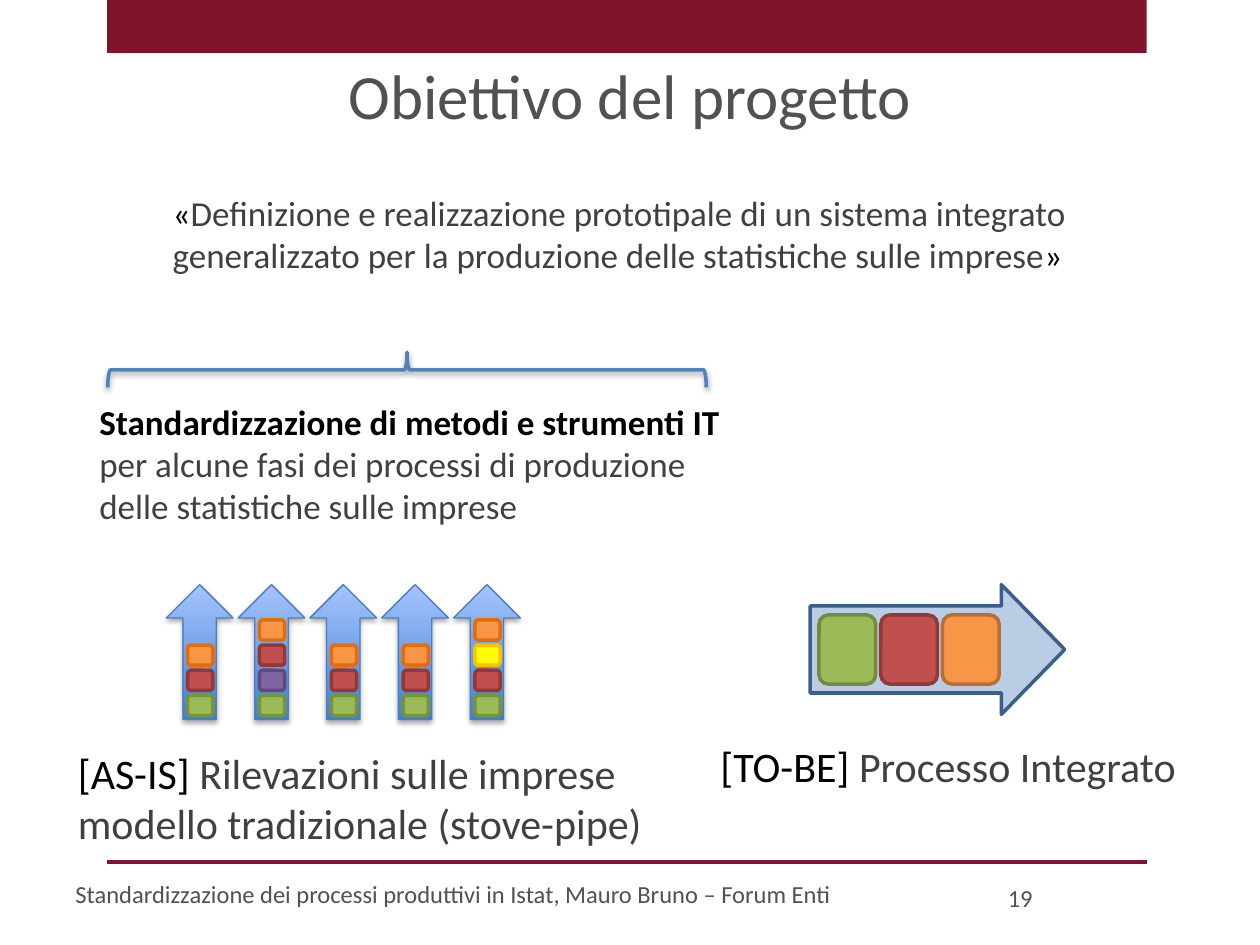
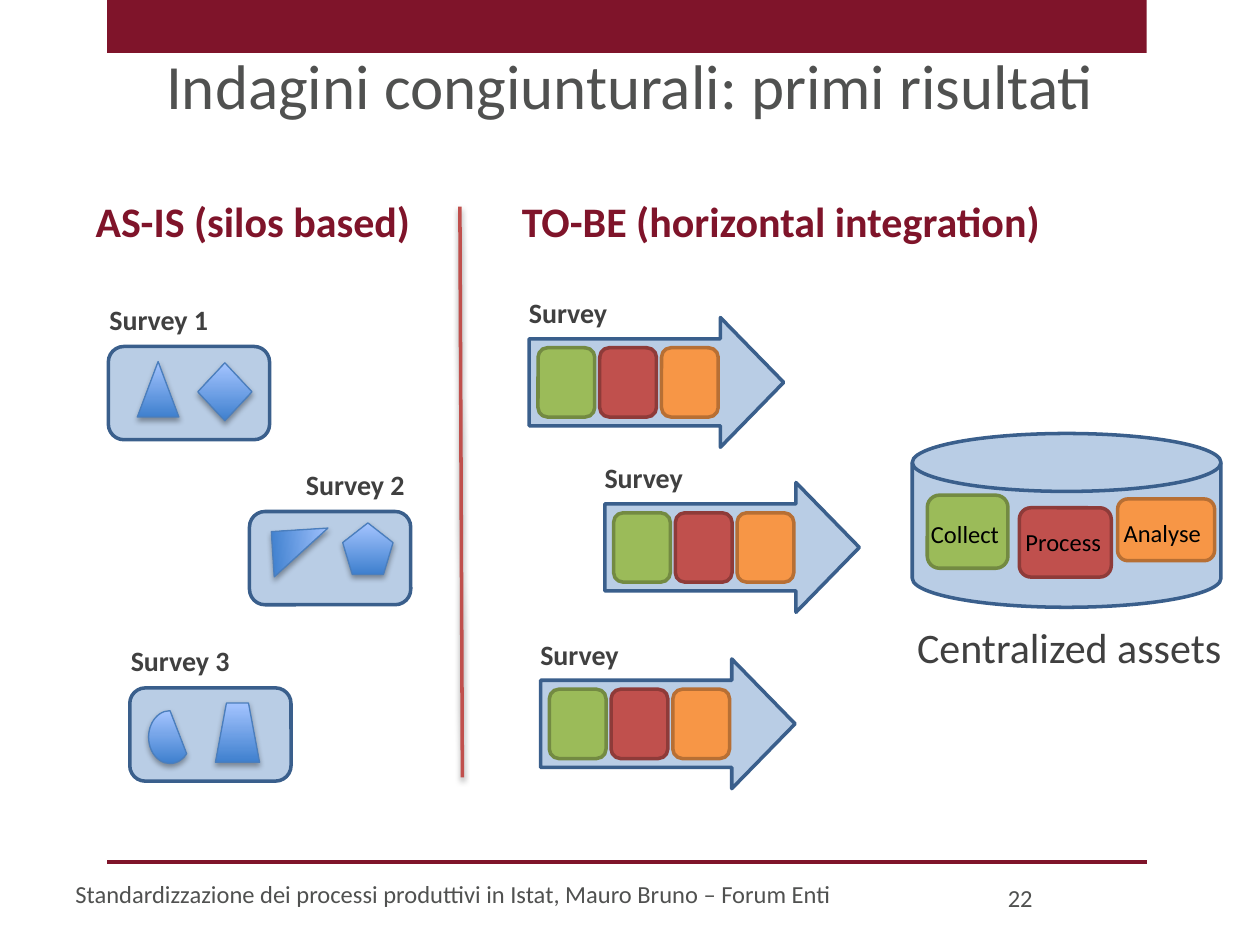
from lxml import etree
from pptx import Presentation
from pptx import util as u
from pptx.dml import color
from pptx.enum import shapes, text
from pptx.oxml import ns

# ---- Content ----
FOOT = "Standardizzazione dei processi produttivi in Istat, Mauro Bruno – Forum Enti"
GOAL = ("Definizione e realizzazione prototipale di un sistema integrato "
        "generalizzato per la produzione delle statistiche sulle imprese")
# Text boxes: place, runs of (text, colour), format
GOALS = [
    ((.77, 1.47, 8.49, .95), [("«", "000000"), (GOAL, "404040"), ("»", "000000")],
     {"size": 20, "inset": .6}),
    ((.69, 3.13, 5.26, 1.11),
     [("Standardizzazione di metodi e strumenti IT ", "000000", True),
      ("per alcune fasi dei processi di produzione delle statistiche sulle imprese", "404040")],
     {"size": 20}),
    ((.52, 5.88, 4.72, .91),
     [("[AS-IS] ", "000000"),
      ("Rilevazioni sulle imprese\nmodello tradizionale (stove-pipe)", "404040")],
     {"size": 24, "wrap": False}),
    ((5.6, 5.83, 3.85, .5), [("[TO-BE] ", "000000"), ("Processo Integrato", "404040")],
     {"size": 24, "wrap": False, "mid": True}),
]
HEADS = [
    ((.57, 1.5, 2.95, .5), [("AS-IS (silos based) ", "7F142A", True)], {"size": 24, "mid": True}),
    ((3.72, 1.5, 5.03, .5), [("TO-BE (horizontal integration) ", "7F142A", True)],
     {"size": 24, "mid": True}),
    ((7.18, 4.88, 2.64, .5), [("Centralized assets", "404040")], {"size": 24, "wrap": False}),
]
# Phases in each stove-pipe, from the bottom up
PIPES = ["gro", "gpro", "gro", "gro", "gryo"]
# Surveys: box corner, label, label offset, figures (kind, place in the box, turn)
SILOS = [
    ((.86, 2.75), "Survey 1", -.09, [("ISOSCELES_TRIANGLE", (.23, .12, .33, .44), 0),
                                     ("DIAMOND", (.71, .13, .43, .46), 0)]),
    ((1.98, 4.06), "Survey 2", .35, [("REGULAR_PENTAGON", (.74, .09, .4, .41), 0),
                                     ("RIGHT_TRIANGLE", (.23, .1, .36, .45), 86.4)]),
    ((1.03, 5.46), "Survey 3", -.09, [("TRAPEZOID", (.68, .12, .35, .47), 0),
                                      ("CHORD", (.15, .18, .34, .42), 0)]),
]
FLOWS = [(4.2, 2.52), (4.8, 3.83), (4.29, 5.23)]
# Assets: block place, phase, label, label place
ASSETS = [
    ((7.36, 3.93, .64, .58), "g", "Collect", (7.29, 4.07, .8, .34)),
    ((8.09, 4.03, .73, .55), "r", "Process", (8.04, 4.13, .91, .34)),
    ((8.87, 3.96, .77, .49), "o", "Analyse", (8.82, 4.06, .9, .34)),
]

# ---- Looks: fill, line ----
WINE, GREY = "7F142A", "505150"
PALE = ("B9CDE5", "3A5F8C")
STEP = {"g": ("9BBB59", "738A42"), "r": ("C0504D", "8E3B39"), "o": ("F79646", "B76F34")}
CELL = {"g": ("9BBB59", "77933C"), "r": ("C0504D", "953735"), "o": ("F79646", "E46C0A"),
        "p": ("8064A2", "604A7B"), "y": ("FFFF00", "FFC000")}


def rgb(hue):
    return color.RGBColor.from_string(hue)


def inch(nums):
    return [u.Inches(n) for n in nums]


def shade(part, alpha, dist):
    """Drop a soft shadow straight down."""
    props = part._element.spPr
    for old in props.findall(ns.qn("a:effectLst")):
        props.remove(old)
    list_ = etree.SubElement(props, ns.qn("a:effectLst"))
    drop = etree.SubElement(list_, ns.qn("a:outerShdw"), blurRad="40000",
                            dist=str(u.Pt(dist)), dir="5400000", rotWithShape="0")
    tint = etree.SubElement(drop, ns.qn("a:srgbClr"), val="000000")
    etree.SubElement(tint, ns.qn("a:alpha"), val=str(alpha * 1000))


def draw(home, kind, place, look, turn=0):
    fill, line = look
    part = home.add_shape(getattr(shapes.MSO_SHAPE, kind), *inch(place))
    part.rotation = turn
    part.shadow.inherit = False
    if fill:
        part.fill.solid()
        part.fill.fore_color.rgb = rgb(fill)
    else:
        part.fill.background()
    if line:
        part.line.color.rgb, part.line.width = rgb(line), u.Pt(2)
    else:
        part.line.fill.background()
    return part


def gloss(home, kind, place, turn=0):
    """Draw a blue shaded figure."""
    part = draw(home, kind, place, (None, "4B7EBC"), turn)
    part.line.width = u.Pt(.75)
    part.fill.gradient()
    part.fill.gradient_angle = 90
    for stop, hue in zip(part.fill.gradient_stops, ("3F80CE", "A4C4FF")):
        stop.color.rgb = rgb(hue)
    shade(part, 35, 1.8)


def rule(home, ends, hue):
    line = home.add_connector(shapes.MSO_CONNECTOR.STRAIGHT, *inch(ends))
    line.line.color.rgb, line.line.width = rgb(hue), u.Pt(2)
    etree.SubElement(line._element.spPr, ns.qn("a:effectLst"))
    return line


def style(font, size, hue, bold=False):
    looks = {"name": "Calibri", "size": u.Pt(size), "bold": bold}
    for key, val in looks.items():
        setattr(font, key, val)
    font.color.rgb = rgb(hue)


def write(home, place, runs, size, wrap=True, mid=False, inset=.1):
    frame = home.add_textbox(*inch(place)).text_frame
    frame.word_wrap, frame.margin_left = wrap, u.Inches(inset)
    para = frame.paragraphs[0]
    para.alignment = text.PP_ALIGN.CENTER if mid else text.PP_ALIGN.LEFT
    for words, *look in runs:
        for num, line in enumerate(words.split("\n")):
            if num:
                para.add_line_break()
            run = para.add_run()
            run.text = line
            style(run.font, size, *look)


def flow(home, x, y, label=None):
    """Draw an integrated process: an arrow holding three phases."""
    group = home.add_group_shape().shapes
    arrow = draw(group, "RIGHT_ARROW", (x, y, 2.02, 1.03), PALE)
    arrow.adjustments[0], arrow.adjustments[1] = .671, .488
    for num, look in enumerate(STEP.values()):
        draw(group, "ROUNDED_RECTANGLE", (x + .07 + .49 * num, y + .24, .45, .55), look)
    if label:
        write(group, (x - .1, y - .22, .83, .37), [(label, "404040", True)], 16, False)


def start(deck, title, place, inset, num):
    """Add a slide with its title, band, rule and footer."""
    slide = deck.slides.add_slide(deck.slide_layouts[5])
    home, head = slide.shapes, slide.shapes.title
    head.left, head.top, head.width, head.height = inch(place)
    frame = head.text_frame
    frame.text = title
    frame.vertical_anchor, frame.margin_top = text.MSO_ANCHOR.TOP, u.Inches(inset)
    frame.paragraphs[0].alignment = text.PP_ALIGN.CENTER
    style(frame.paragraphs[0].runs[0].font, 36, GREY)
    draw(home, "RECTANGLE", (.85, 0, 8.25, .42), (WINE, None))
    rule(home, (.85, 6.84, 9.1, 6.84), WINE)
    write(home, (.5, 6.93, 6.56, .4), [(FOOT, GREY)], 14)
    write(home, (7.9, 6.96, .71, .4), [(str(num), GREY)], 14)
    return home


def goal(deck):
    home = start(deck, "Obiettivo del progetto", (.5, .3, 9, .8), .15, 19)
    for place, runs, look in GOALS:
        write(home, place, runs, **look)
    brace = draw(home, "LEFT_BRACE", (3.09, .56, .28, 4.75), (None, "4F81BD"), 90)
    shade(brace, 38, 1.6)
    flow(home, 6.43, 4.64)
    # Stove-pipes
    for col, pipe in enumerate(PIPES):
        x = 1.32 + .57 * col
        gloss(home, "UP_ARROW", (x, 4.64, .53, 1.07))
        for row, key in enumerate(pipe):
            draw(home, "ROUNDED_RECTANGLE", (x + .17, 5.52 - .2 * row, .2, .16), CELL[key])


def results(deck):
    home = start(deck, "Indagini congiunturali: primi risultati", (.5, .32, 9, 1.25), .05, 22)
    for place, runs, look in HEADS:
        write(home, place, runs, **look)
    shade(rule(home, (3.65, 1.64, 3.67, 6.17), "C0504D"), 38, 1.6)
    # Silos
    for (x, y), label, shift, figs in SILOS:
        group = home.add_group_shape().shapes
        draw(group, "ROUNDED_RECTANGLE", (x, y, 1.28, .74), PALE)
        for kind, (dx, dy, wide, high), turn in figs:
            gloss(group, kind, (x + dx, y + dy, wide, high), turn)
        write(group, (x + shift, y - .4, 1, .37), [(label, "404040", True)], 16, False)
    # Integrated surveys
    for x, y in FLOWS:
        flow(home, x, y, "Survey")
    # Central store
    draw(home, "FLOWCHART_MAGNETIC_DISK", (7.24, 3.44, 2.45, 1.38), PALE)
    for place, key, label, spot in ASSETS:
        draw(home, "ROUNDED_RECTANGLE", place, STEP[key])
        write(home, spot, [(label, "000000")], 14, False)


def main():
    deck = Presentation()
    deck.slide_width, deck.slide_height = inch((10, 7.5))
    goal(deck)
    results(deck)
    deck.save("out.pptx")


if __name__ == "__main__":
    main()
